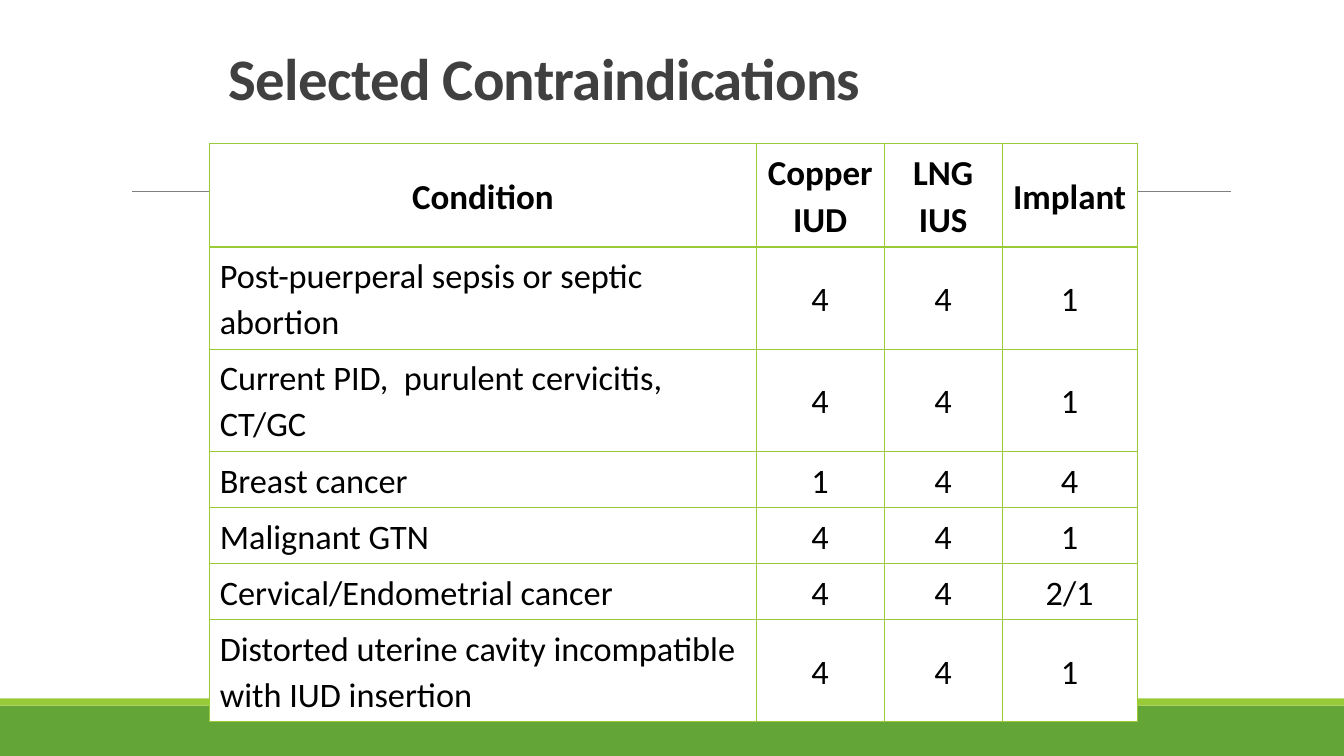
import pptx
import pptx.dml.color
import pptx.enum.shapes
import pptx.enum.text
import pptx.oxml
import pptx.util
from pptx.util import Inches

TITLE = "Selected Contraindications"
HEADINGS = ("Condition", "Copper IUD", "LNG IUS", "Implant")
CONDITIONS = [
    ("Post-puerperal sepsis or septic abortion", "4", "4", "1"),
    ("Current PID,  purulent cervicitis, CT/GC", "4", "4", "1"),
    ("Breast cancer", "1", "4", "4"),
    ("Malignant GTN", "4", "4", "1"),
    ("Cervical/Endometrial cancer", "4", "4", "2/1"),
    ("Distorted uterine cavity incompatible with IUD insertion", "4", "4", "1"),
]
COLUMN_WIDTHS = (5.42, 1.27, 1.17, 1.34)
ROW_HEIGHTS = (1.02, 1, 1, 0.55, 0.55, 0.55, 1)
FOOTER_BANDS = [("green", 7, 0.5), ("lime", 6.93, 0.07)]
COLORS = {"green": "63A537", "lime": "99CB38", "rule": "808080",
          "title": "404040", "text": "000000", "white": "FFFFFF"}
FONT = "Calibri"
ALIGN = pptx.enum.text.PP_ALIGN
ANCHOR = pptx.enum.text.MSO_ANCHOR
A_NS = 'xmlns:a="http://schemas.openxmlformats.org/drawingml/2006/main"'


def rgb(name):
    return pptx.dml.color.RGBColor.from_string(COLORS[name])


def write_text(frame, text, size, color="text", bold=False,
               align=ALIGN.LEFT, line_spacing=1.1, tracking=None):
    paragraph = frame.paragraphs[0]
    paragraph.alignment = align
    paragraph.line_spacing = line_spacing
    paragraph.space_before = pptx.util.Pt(0)
    run = paragraph.add_run()
    run.text = text
    run.font.name = FONT
    run.font.size = pptx.util.Pt(size)
    run.font.bold = bold
    run.font.color.rgb = rgb(color)
    if tracking is not None:
        run.font._element.set("spc", str(int(tracking * 100)))


def add_borders(cell, color, width):
    """Outline all four sides of a cell; the lines must precede its fill."""
    properties = cell._tc.get_or_add_tcPr()
    for position, side in enumerate(("lnL", "lnR", "lnT", "lnB")):
        properties.insert(position, pptx.oxml.parse_xml(
            f'<a:{side} {A_NS} w="{pptx.util.Pt(width)}"><a:solidFill>'
            f'<a:srgbClr val="{COLORS[color]}"/></a:solidFill></a:{side}>'))


def add_backdrop(slide):
    for color, top, height in FOOTER_BANDS:
        band = slide.shapes.add_shape(
            pptx.enum.shapes.MSO_SHAPE.RECTANGLE,
            0, Inches(top), Inches(13.33), Inches(height))
        band.shadow.inherit = False
        band.fill.solid()
        band.fill.fore_color.rgb = rgb(color)
        band.line.fill.background()
    rule = slide.shapes.add_connector(
        pptx.enum.shapes.MSO_CONNECTOR.STRAIGHT,
        Inches(1.31), Inches(1.9), Inches(12.21), Inches(1.9))
    rule.line.color.rgb = rgb("rule")
    rule.line.width = pptx.util.Pt(0.5)
    rule._element.spPr.append(pptx.oxml.parse_xml(f"<a:effectLst {A_NS}/>"))


def add_title(slide):
    title = slide.shapes.title
    title.left, title.top = Inches(2.17), Inches(0.17)
    title.width, title.height = Inches(9), Inches(1)
    frame = title.text_frame
    frame.word_wrap = True
    frame.auto_size = pptx.enum.text.MSO_AUTO_SIZE.NONE
    frame.vertical_anchor = ANCHOR.BOTTOM
    write_text(frame, TITLE, 42, color="title", bold=True,
               line_spacing=0.85, tracking=-0.5)


def add_contraindications(slide):
    rows = [HEADINGS] + CONDITIONS
    table = slide.shapes.add_table(
        len(rows), len(HEADINGS), Inches(2.08), Inches(1.42),
        Inches(sum(COLUMN_WIDTHS)), Inches(sum(ROW_HEIGHTS))).table
    table.first_row = table.horz_banding = False
    for column, width in zip(table.columns, COLUMN_WIDTHS):
        column.width = Inches(width)
    for row, height in zip(table.rows, ROW_HEIGHTS):
        row.height = Inches(height)
    for r, values in enumerate(rows):
        for c, value in enumerate(values):
            cell = table.cell(r, c)
            heading = r == 0
            condition = c == 0 and not heading
            cell.fill.solid()
            cell.fill.fore_color.rgb = rgb("white")
            add_borders(cell, "lime", 1)
            cell.vertical_anchor = ANCHOR.TOP if condition else ANCHOR.MIDDLE
            write_text(cell.text_frame, value, 25 if heading else 24.5,
                       bold=heading,
                       align=ALIGN.LEFT if condition else ALIGN.CENTER)


def main():
    deck = pptx.Presentation()
    deck.slide_width, deck.slide_height = Inches(13.33), Inches(7.5)
    slide = deck.slides.add_slide(deck.slide_layouts[5])
    slide.background.fill.solid()
    slide.background.fill.fore_color.rgb = rgb("white")
    add_backdrop(slide)
    add_title(slide)
    add_contraindications(slide)
    deck.save("out.pptx")


if __name__ == "__main__":
    main()
